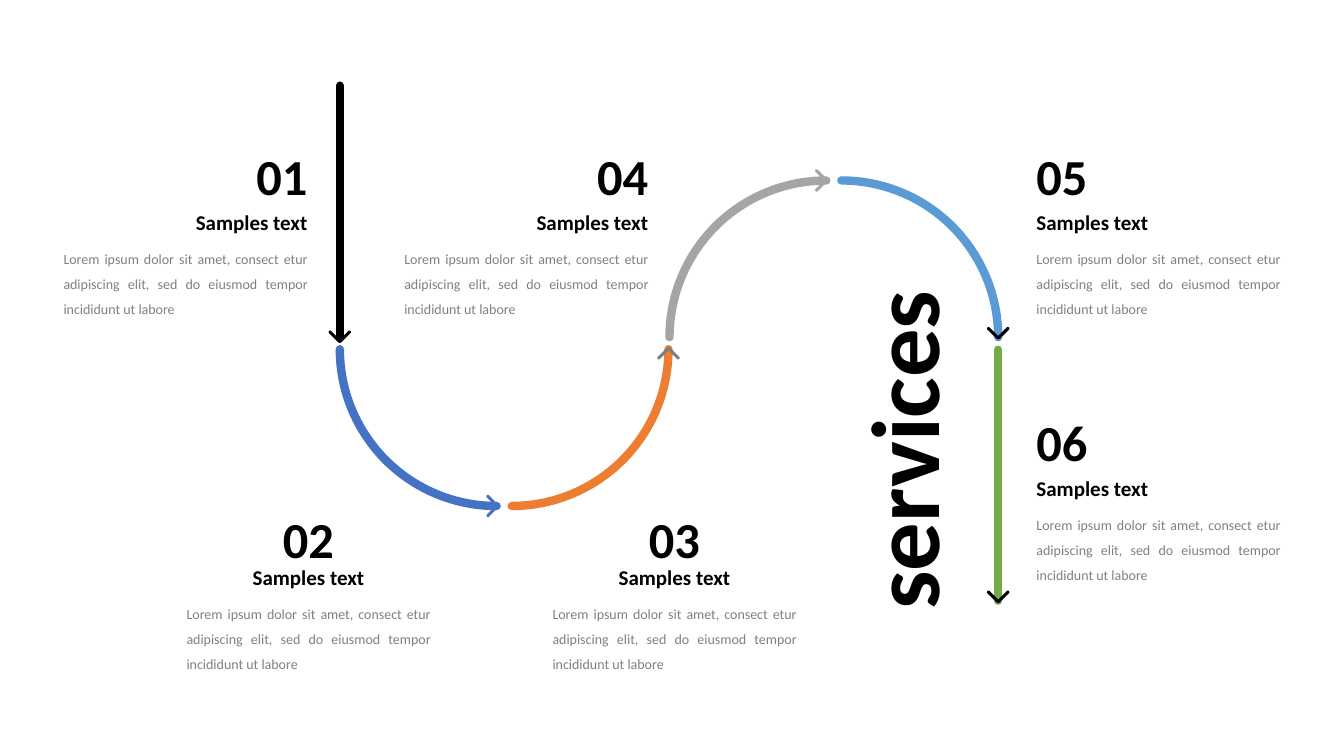
from math import cos, radians, sin

from lxml import etree
from pptx import Presentation, util as u
from pptx.dml.color import RGBColor
from pptx.enum import shapes, text
from pptx.oxml.ns import qn

WIDE, HIGH = 13.33, 7.5
BLACK, BLUE, GREY = "000000", "4472C4", "A5A5A5"
LOREM = ("Lorem ipsum dolor sit amet, consect etur adipiscing elit, "
         "sed do eiusmod tempor incididunt ut labore")
LEFT, MID, RIGHT, FULL = (text.PP_ALIGN.LEFT, text.PP_ALIGN.CENTER,
                          text.PP_ALIGN.RIGHT, text.PP_ALIGN.JUSTIFY)
SHARE = {LEFT: 0, MID: 0.5, RIGHT: 1}


def color(code):
    return RGBColor.from_string(code)


def inches(*sizes):
    return [u.Inches(size) for size in sizes]


def stroke(item, code):
    item.line.color.rgb = color(code)
    item.line.width = u.Pt(6)
    item.line._get_or_add_ln().set("cap", "rnd")


def stem(group, x, top, end, code):
    line = group.shapes.add_connector(
        shapes.MSO_CONNECTOR.STRAIGHT, *inches(x, top, x, end))
    stroke(line, code)
    etree.SubElement(line._element.spPr, qn("a:effectLst"))


def curve(group, x, y, size, turn, code):
    arc = group.shapes.add_shape(
        shapes.MSO_SHAPE.ARC, *inches(x, y, size, size))
    arc.shadow.inherit = False
    arc.fill.background()
    arc.rotation = turn
    stroke(arc, code)


def arrow(group, x, y, turn, code):
    wide, high, gap = 0.16, 0.03, 0.05
    for side, tilt in ((1, 45), (-1, 135)):
        mid_x = x + side * gap * sin(radians(turn))
        mid_y = y - side * gap * cos(radians(turn))
        bar = group.shapes.add_shape(
            shapes.MSO_SHAPE.ROUNDED_RECTANGLE,
            *inches(mid_x - wide / 2, mid_y - high / 2, wide, high))
        bar.adjustments[0] = 0.5
        bar.rotation = (turn + tilt) % 360
        bar.shadow.inherit = False
        bar.fill.solid()
        bar.fill.fore_color.rgb = color(code)
        bar.line.fill.background()


def flow(slide, x, y, wide, high):
    group = slide.shapes.add_group_shape()
    size, drop, gap = 3.11, 2.49, 0.15
    end, base = x + wide, y + high
    low, top = y + 1.06, y + 0.94
    crest = end - size
    curve(group, x, low, size, 180, BLUE)
    stem(group, x, y, y + drop, BLACK)
    curve(group, x + gap, low, size, 90, "ED7D31")
    curve(group, crest, top, size, 0, "5B9BD5")
    curve(group, crest - gap, top, size, 270, GREY)
    stem(group, end, base - drop, base, "70AD47")
    arrow(group, x, y + drop, 90, BLACK)
    arrow(group, x + size / 2 - 0.04, low + size, 0, BLUE)
    arrow(group, crest + size / 2 - 0.2, top, 0, GREY)
    arrow(group, x + gap + size, low + size / 2 + 0.04, 270, "7F7F7F")
    arrow(group, end, top + size / 2 - 0.04, 90, BLACK)
    arrow(group, end, base - 0.04, 90, BLACK)


def label(slide, box, words, size, align, code=BLACK, bold=True, wrap=False):
    area = slide.shapes.add_textbox(*inches(*box))
    frame = area.text_frame
    frame.margin_left = frame.margin_right = 0
    frame.margin_top = frame.margin_bottom = 0
    frame.word_wrap = wrap
    frame.auto_size = text.MSO_AUTO_SIZE.SHAPE_TO_FIT_TEXT
    para = frame.paragraphs[0]
    para.alignment = align
    run = para.add_run()
    run.text = words
    run.font.name = "Calibri"
    run.font.size = u.Pt(size)
    run.font.bold = bold
    run.font.color.rgb = color(code)
    return area


def step(slide, x, y, wide, number, align, head):
    for words, size, span, top, high in (
            (number, 36, 0.51, 0, 0.61),
            ("Samples text", 15, 1.12, head, 0.25)):
        left = x + (wide - span) * SHARE[align]
        label(slide, (left, y + top, span, high), words, size, align)
    body = label(slide, (x, y + head + 0.32, wide, 0.73), LOREM, 10, FULL,
                 "808080", False, True)
    body.text_frame.paragraphs[0].line_spacing = 1.5


def title(slide, x, y, wide, high):
    area = label(slide, (x, y, wide, high), "services", 69, LEFT)
    area.rotation = 270


def main():
    deck = Presentation()
    deck.slide_width, deck.slide_height = inches(WIDE, HIGH)
    slide = deck.slides.add_slide(deck.slide_layouts[6])
    flow(slide, 3.37, 0.85, 6.53, 5.11)
    upper, right = 1.44, 10.28
    for number, x, y, align, head in (
            ("01", 0.63, upper, RIGHT, 0.64),
            ("02", 1.85, 5.04, MID, 0.56),
            ("03", 5.48, 5.04, MID, 0.56),
            ("04", 4.01, upper, RIGHT, 0.64),
            ("05", right, upper, LEFT, 0.64),
            ("06", right, 4.08, LEFT, 0.64)):
        step(slide, x, y, 2.42, number, align, head)
    title(slide, 7.34, 3.87, 3.2, 1.16)
    deck.save("out.pptx")


if __name__ == "__main__":
    main()
